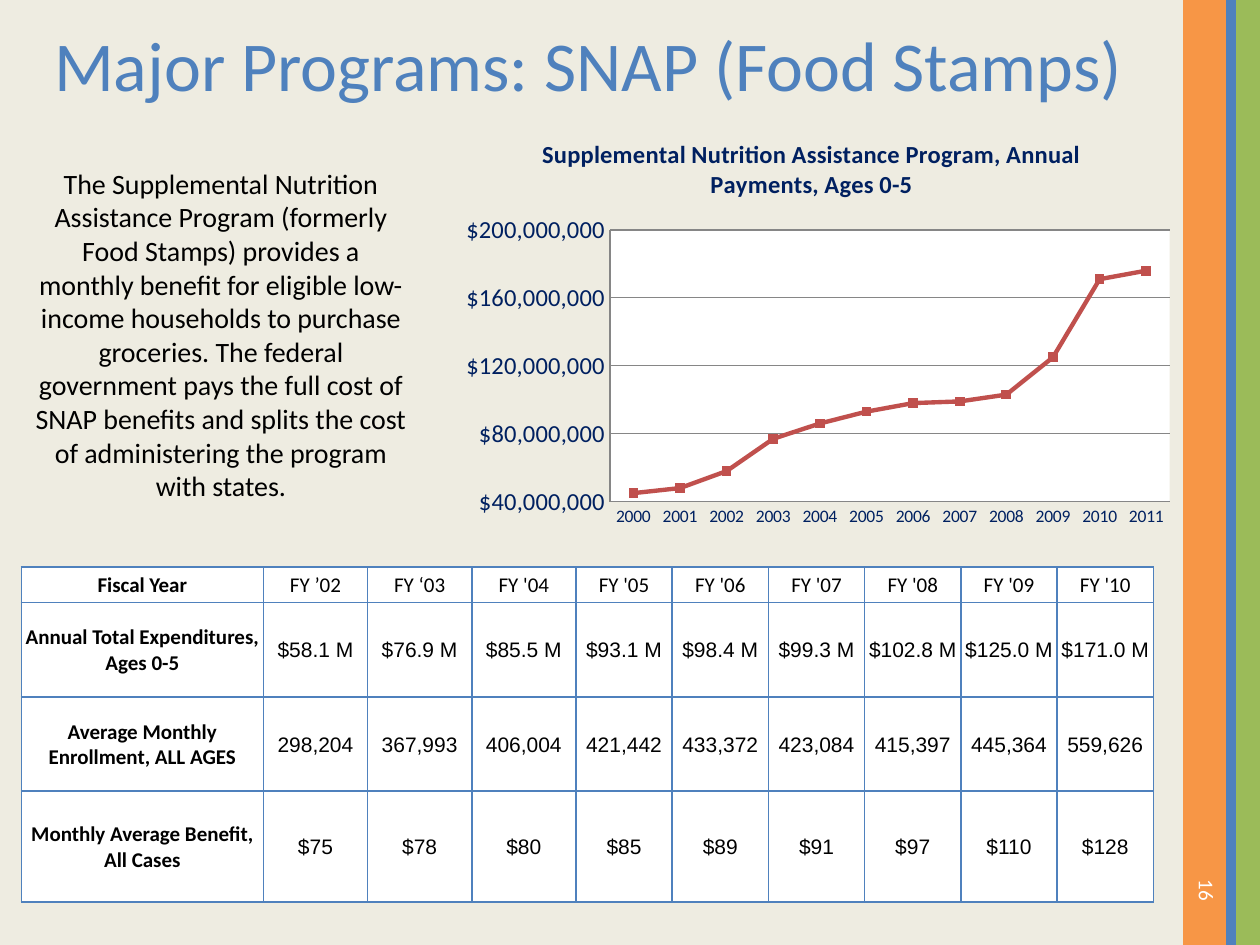
from lxml import etree
from pptx import Presentation
from pptx.chart.data import CategoryChartData
from pptx.dml.color import RGBColor
from pptx.enum.chart import XL_CHART_TYPE, XL_MARKER_STYLE, XL_TICK_MARK
from pptx.enum.shapes import MSO_SHAPE
from pptx.enum.text import MSO_ANCHOR, PP_ALIGN
from pptx.oxml import parse_xml
from pptx.oxml.ns import nsdecls, qn
from pptx.util import Cm, Pt

CREAM = RGBColor(0xEE, 0xEC, 0xE1)
ORANGE = RGBColor(0xF7, 0x96, 0x46)
BLUE = RGBColor(0x4F, 0x81, 0xBD)
GREEN = RGBColor(0x9B, 0xBB, 0x59)
RED = RGBColor(0xC0, 0x50, 0x4D)
NAVY = RGBColor(0x00, 0x20, 0x60)
GREY = RGBColor(0x86, 0x86, 0x86)
BLACK = RGBColor(0, 0, 0)
WHITE = RGBColor(0xFF, 0xFF, 0xFF)

INTRO = (
    "The Supplemental Nutrition Assistance Program (formerly Food Stamps) provides a "
    "monthly benefit for eligible low-income households to purchase groceries. The federal "
    "government pays the full cost of SNAP benefits and splits the cost of administering "
    "the program with states."
)
PAYMENTS_M = [45, 48, 58, 77, 86, 93, 98, 99, 103, 125, 171, 176]
TABLE_ROWS = [
    ["Fiscal Year", "FY ’02", "FY ‘03", "FY '04", "FY '05", "FY '06",
     "FY '07", "FY '08", "FY '09", "FY '10"],
    ["Annual Total Expenditures, Ages 0-5", "$58.1 M", "$76.9 M", "$85.5 M", "$93.1 M",
     "$98.4 M", "$99.3 M", "$102.8 M", "$125.0 M", "$171.0 M"],
    ["Average Monthly Enrollment, ALL AGES", "298,204", "367,993", "406,004", "421,442",
     "433,372", "423,084", "415,397", "445,364", "559,626"],
    ["Monthly Average Benefit, All Cases", "$75", "$78", "$80", "$85", "$89",
     "$91", "$97", "$110", "$128"],
]
COL_WIDTHS = [4.88] + [2.1] * 3 + [1.94] * 6
ROW_HEIGHTS = [0.72, 1.9, 1.9, 2.23]


def style_font(font, size, color, name="Calibri", bold=False):
    font.size, font.name, font.bold = Pt(size), name, bold
    font.color.rgb = color


def write(tf, text, size, color, align=PP_ALIGN.CENTER, **style):
    tf.word_wrap = True
    p = tf.paragraphs[0]
    p.alignment = align
    r = p.add_run()
    r.text = text
    style_font(r.font, size, color, **style)


def add_side_bars(s, left, top, height):
    # Stripes run left to right without gaps
    for color, width in ((ORANGE, 0.87), (BLUE, 0.2), (GREEN, 0.48)):
        sp = s.shapes.add_shape(MSO_SHAPE.RECTANGLE, Cm(left), Cm(top), Cm(width), Cm(height))
        sp.shadow.inherit = False
        sp.fill.solid()
        sp.fill.fore_color.rgb = color
        sp.line.fill.background()
        left += width


def add_title(s, left, top, width, height):
    sp = s.shapes.title
    sp.left, sp.top, sp.width, sp.height = Cm(left), Cm(top), Cm(width), Cm(height)
    sp.text_frame.vertical_anchor = MSO_ANCHOR.MIDDLE
    write(sp.text_frame, "Major Programs: SNAP (Food Stamps)", 40, BLUE)


def add_intro(s, left, top, width, height):
    sp = s.shapes.add_textbox(Cm(left), Cm(top), Cm(width), Cm(height))
    write(sp.text_frame, INTRO, 16, BLACK)


def set_plot_layout(plot_area, x, y, w, h):
    for old in plot_area.findall(qn("c:layout")):
        plot_area.remove(old)
    layout = parse_xml(f"<c:layout {nsdecls('c')}><c:manualLayout/></c:layout>")
    settings = [("layoutTarget", "inner"), ("xMode", "edge"), ("yMode", "edge"),
                ("x", x), ("y", y), ("w", w), ("h", h)]
    for tag, value in settings:
        etree.SubElement(layout[0], qn(f"c:{tag}")).set("val", str(value))
    plot_area.insert(0, layout)


def add_payments_chart(s, left, top, width, height):
    data = CategoryChartData()
    data.categories = [str(year) for year in range(2000, 2012)]
    data.add_series("Series 1", [m * 1_000_000 for m in PAYMENTS_M])
    chart = s.shapes.add_chart(XL_CHART_TYPE.LINE_MARKERS, Cm(left), Cm(top),
                               Cm(width), Cm(height), data).chart
    style_font(chart.font, 10, BLACK)
    chart.has_legend = False
    chart.has_title = True
    write(chart.chart_title.text_frame,
          "Supplemental Nutrition Assistance Program, Annual Payments, Ages 0-5",
          14, NAVY, bold=True)

    # Axes
    for axis, size in ((chart.category_axis, 10), (chart.value_axis, 14)):
        axis.major_tick_mark = axis.minor_tick_mark = XL_TICK_MARK.NONE
        style_font(axis.tick_labels.font, size, NAVY)
        axis.format.line.color.rgb = GREY
    axis = chart.value_axis
    axis.minimum_scale, axis.maximum_scale = 40_000_000, 200_000_000
    axis.major_unit = 40_000_000
    axis.major_gridlines.format.line.color.rgb = GREY
    axis.tick_labels.number_format = '"$"#,##0'
    axis.tick_labels.number_format_is_linked = False

    # Line and markers
    plot = chart.plots[0]
    plot.vary_by_categories = False
    series = plot.series[0]
    series.smooth = False
    series.format.line.color.rgb = RED
    series.format.line.width = Pt(2.5)
    series.marker.style, series.marker.size = XL_MARKER_STYLE.SQUARE, 5
    series.marker.format.fill.solid()
    series.marker.format.fill.fore_color.rgb = RED
    series.marker.format.line.color.rgb = RED

    # White plot area
    plot_area = chart.element.find(f".//{qn('c:plotArea')}")
    set_plot_layout(plot_area, 0.23, 0.27, 0.75, 0.65)
    plot_area.append(parse_xml(
        f"<c:spPr {nsdecls('c', 'a')}><a:solidFill>"
        f'<a:srgbClr val="{WHITE}"/></a:solidFill></c:spPr>'))


def set_borders(cell):
    tc_pr = cell._tc.get_or_add_tcPr()
    for i, side in enumerate(("lnL", "lnR", "lnT", "lnB")):
        tc_pr.insert(i, parse_xml(
            f'<a:{side} {nsdecls("a")} w="{Pt(1)}"><a:solidFill>'
            f'<a:srgbClr val="{BLUE}"/></a:solidFill></a:{side}>'))


def add_program_table(s, left, top):
    table = s.shapes.add_table(len(ROW_HEIGHTS), len(COL_WIDTHS), Cm(left), Cm(top),
                               Cm(sum(COL_WIDTHS)), Cm(sum(ROW_HEIGHTS))).table
    table.first_row = table.horz_banding = False
    for col, width in zip(table.columns, COL_WIDTHS):
        col.width = Cm(width)
    for row, height in zip(table.rows, ROW_HEIGHTS):
        row.height = Cm(height)
    for i, texts in enumerate(TABLE_ROWS):
        for j, text in enumerate(texts):
            cell = table.cell(i, j)
            cell.fill.solid()
            cell.fill.fore_color.rgb = WHITE
            cell.vertical_anchor = MSO_ANCHOR.MIDDLE
            cell.margin_left = cell.margin_right = cell.margin_top = Cm(0.03)
            cell.margin_bottom = 0
            name = "Arial" if i and j else "Calibri"
            write(cell.text_frame, text, 12, BLACK, name=name, bold=j == 0)
            set_borders(cell)


def add_page_number(s, left, top, width, height):
    sp = s.shapes.add_textbox(Cm(left), Cm(top), Cm(width), Cm(height))
    sp.rotation = 90
    sp.text_frame.vertical_anchor = MSO_ANCHOR.MIDDLE
    write(sp.text_frame, "16", 12, WHITE, PP_ALIGN.RIGHT)


def main():
    prs = Presentation()
    prs.slide_width, prs.slide_height = Cm(25.4), Cm(19.05)
    s = prs.slides.add_slide(prs.slide_layouts[5])
    s.background.fill.solid()
    s.background.fill.fore_color.rgb = CREAM
    add_side_bars(s, 23.85, 0, 19.05)
    add_title(s, 0.64, 0.23, 22.43, 2.11)
    add_intro(s, 0.43, 3.23, 8.05, 7.09)
    add_program_table(s, 0.43, 11.43)
    add_payments_chart(s, 8.84, 2.36, 15.04, 8.43)
    add_page_number(s, 22.99, 16.56, 2.69, 1.02)
    prs.save("out.pptx")


if __name__ == "__main__":
    main()
